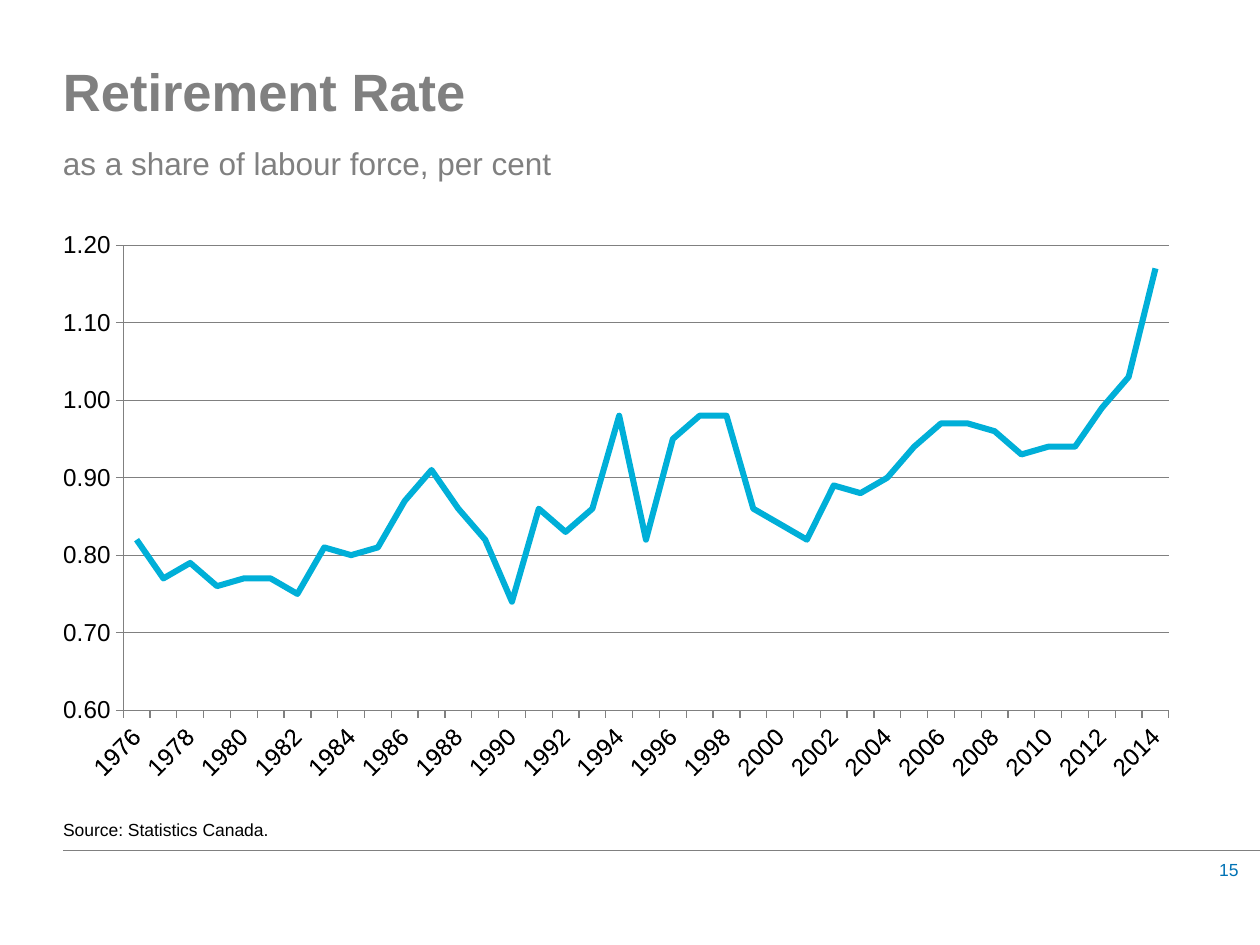
from lxml.etree import SubElement
from pptx import Presentation
from pptx.chart.data import CategoryChartData
from pptx.dml.color import RGBColor
from pptx.enum.chart import XL_CHART_TYPE, XL_TICK_MARK
from pptx.enum.shapes import MSO_CONNECTOR
from pptx.enum.text import PP_ALIGN
from pptx.oxml import parse_xml
from pptx.oxml.ns import nsdecls, qn
from pptx.util import Inches, Pt

# Content
TITLE = "Retirement Rate"
SUBTITLE = "as a share of labour force, per cent"
SOURCE = "Source: Statistics Canada."
PAGE_NUMBER = "15"
FIRST_YEAR = 1976
RATES = [
    0.82, 0.77, 0.79, 0.76, 0.77, 0.77, 0.75, 0.81, 0.80, 0.81,
    0.87, 0.91, 0.86, 0.82, 0.74, 0.86, 0.83, 0.86, 0.98, 0.82,
    0.95, 0.98, 0.98, 0.86, 0.84, 0.82, 0.89, 0.88, 0.90, 0.94,
    0.97, 0.97, 0.96, 0.93, 0.94, 0.94, 0.99, 1.03, 1.17,
]

# Style and layout
FONT = "Arial"
COLORS = {"grey": "808080", "text": "000000", "series": "00AFD8", "number": "0072B5"}
WIDTH, HEIGHT = 10, 7.5
MARGIN = WIDTH / 20
BODY_WIDTH = WIDTH - 2 * MARGIN
RULE_TOP = HEIGHT * 0.9
PLOT_SHARES = {"x": 0.041, "y": 0.084, "w": 0.934, "h": 0.782}


def color(name):
    return RGBColor.from_string(COLORS[name])


def set_font(font, size, name, bold=False):
    font.name, font.size, font.bold = FONT, Pt(size), bold
    font.color.rgb = color(name)


def set_line(line, name, width):
    line.color.rgb = color(name)
    line.width = Pt(width)


def add_box(page, left, top, width, height):
    """Add a text box without insets and return its first paragraph."""
    box = page.shapes.add_textbox(*map(Inches, (left, top, width, height)))
    frame = box.text_frame
    frame.word_wrap = True
    frame.margin_left = frame.margin_right = frame.margin_top = frame.margin_bottom = 0
    return frame.paragraphs[0]


def add_title(page):
    para = add_box(page, MARGIN, MARGIN, BODY_WIDTH, 0.97)
    para.line_spacing = Pt(34)
    span = para.add_run()
    span.text = TITLE
    set_font(span.font, 30, "grey", bold=True)
    para.add_line_break()
    span = para.add_run()
    span.text = SUBTITLE
    set_font(span.font, 18, "grey")


def add_rate_chart(page):
    data = CategoryChartData(number_format="0.00")
    data.categories = [str(FIRST_YEAR + i) for i in range(len(RATES))]
    data.add_series("Retirement rate", RATES)
    frame = page.shapes.add_chart(
        XL_CHART_TYPE.LINE, *map(Inches, (MARGIN, 1.55, BODY_WIDTH, 4.72)), data)
    chart = frame.chart
    chart.has_legend = chart.has_title = False
    set_font(chart.font, 18, "text")
    chart.plots[0].vary_by_categories = False

    series = chart.series[0]
    series.smooth = False
    set_line(series.format.line, "series", 3.5)

    years, rates = chart.category_axis, chart.value_axis
    for axis in (years, rates):
        set_font(axis.tick_labels.font, 14, "text")
        set_line(axis.format.line, "grey", 0.75)
        axis.major_tick_mark = XL_TICK_MARK.OUTSIDE
        axis.minor_tick_mark = XL_TICK_MARK.NONE
    rates.minimum_scale, rates.maximum_scale, rates.major_unit = 0.6, 1.2, 0.1
    rates.tick_labels.number_format = "#,##0.00"
    rates.tick_labels.number_format_is_linked = False
    rates.has_major_gridlines = True
    set_line(rates.major_gridlines.format.line, "grey", 0.75)

    # Slanted labels on every second year
    axis_xml = chart.element.find(".//" + qn("c:catAx"))
    slant = axis_xml.find(qn("c:txPr")).find(qn("a:bodyPr"))
    slant.set("rot", str(-45 * 60000))
    slant.set("vert", "horz")
    last = axis_xml.find(qn("c:noMultiLvlLbl"))
    for tag, step in (("tickLblSkip", 2), ("tickMarkSkip", 1)):
        last.addprevious(parse_xml(f'<c:{tag} {nsdecls("c")} val="{step}"/>'))

    # Fixed inner plot area
    plot_area = chart.element.find(".//" + qn("c:plotArea"))
    for old in plot_area.findall(qn("c:layout")):
        plot_area.remove(old)
    layout = parse_xml(f'<c:layout {nsdecls("c")}/>')
    manual = SubElement(layout, qn("c:manualLayout"))
    settings = {"layoutTarget": "inner", "xMode": "edge", "yMode": "edge", **PLOT_SHARES}
    for tag, value in settings.items():
        SubElement(manual, qn("c:" + tag)).set("val", str(value))
    plot_area.insert(0, layout)


def add_footer(page):
    para = add_box(page, MARGIN, RULE_TOP - 0.25, 8.88, 0.25)
    para.text = SOURCE
    set_font(para.font, 10, "text")

    rule = page.shapes.add_connector(
        MSO_CONNECTOR.STRAIGHT, *map(Inches, (MARGIN, RULE_TOP, WIDTH, RULE_TOP)))
    set_line(rule.line, "grey", 0.75)
    SubElement(rule.element.spPr, qn("a:effectLst"))

    para = add_box(page, WIDTH - MARGIN, 6.82, 0.33, 0.17)
    para.text = PAGE_NUMBER
    para.alignment = PP_ALIGN.RIGHT
    set_font(para.font, 10, "number")


def main():
    deck = Presentation()
    deck.slide_width, deck.slide_height = Inches(WIDTH), Inches(HEIGHT)
    page = deck.slides.add_slide(deck.slide_layouts[6])
    add_title(page)
    add_rate_chart(page)
    add_footer(page)
    deck.save("out.pptx")


if __name__ == "__main__":
    main()
